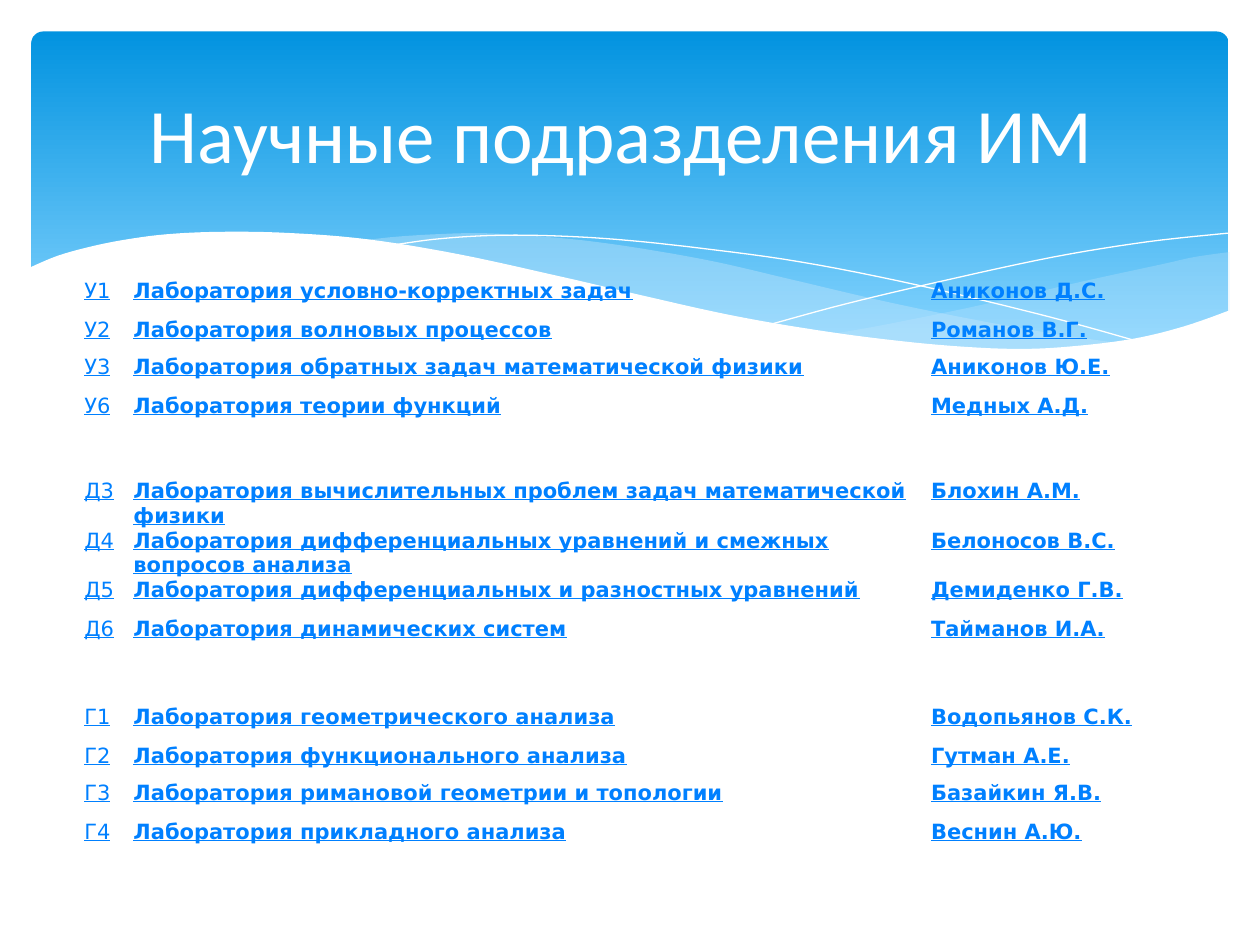
from dataclasses import dataclass

from lxml.etree import SubElement
from pptx import Presentation
from pptx.dml.color import RGBColor
from pptx.enum.shapes import MSO_SHAPE
from pptx.enum.text import MSO_ANCHOR, PP_ALIGN
from pptx.oxml.ns import qn
from pptx.util import Cm, Pt


@dataclass(frozen=True)
class Theme:
    """Colours, fonts and type sizes of the slide."""
    white: RGBColor = RGBColor.from_string("FFFFFF")
    deep: RGBColor = RGBColor.from_string("0293E0")
    light: RGBColor = RGBColor.from_string("83D3FE")
    mist: RGBColor = RGBColor.from_string("C6E7FC")
    link: RGBColor = RGBColor.from_string("0080FF")
    head: str = "Calibri"
    body: str = "DejaVu Sans"
    large: Pt = Pt(44)
    small: Pt = Pt(12)
    tiny: Pt = Pt(10)


THEME = Theme()
TITLE = "Научные подразделения ИМ "
PLAIN = "{2D5ABB26-0587-4C30-8999-92F81FD0307C}"
TALL, MID, GAP = Cm(0.79), Cm(0.74), Cm(0.49)
COLS = [Cm(0.99), Cm(16.08), Cm(4.52)]
GROUPS = [
    ([TALL, MID, TALL, MID], [
        ("У1", "Лаборатория условно-корректных задач", "Аниконов Д.С."),
        ("У2", "Лаборатория волновых процессов", "Романов В.Г."),
        ("У3", "Лаборатория обратных задач математической физики", "Аниконов Ю.Е."),
        ("У6", "Лаборатория теории функций", "Медных А.Д."),
    ]),
    ([TALL] * 4, [
        ("Д3", "Лаборатория вычислительных проблем задач математической физики",
         "Блохин А.М."),
        ("Д4", "Лаборатория дифференциальных уравнений и смежных вопросов анализа",
         "Белоносов В.С."),
        ("Д5", "Лаборатория дифференциальных и разностных уравнений", "Демиденко Г.В."),
        ("Д6", "Лаборатория динамических систем", "Тайманов И.А."),
    ]),
    ([TALL, MID, TALL, MID], [
        ("Г1", "Лаборатория геометрического анализа", "Водопьянов С.К."),
        ("Г2", "Лаборатория функционального анализа", "Гутман А.Е."),
        ("Г3", "Лаборатория римановой геометрии и топологии", "Базайкин Я.В."),
        ("Г4", "Лаборатория прикладного анализа", "Веснин А.Ю."),
    ]),
]

RIGHT = [
    [(97.6, 20), (94.8, 20.4), (92.1, 21), (86.1, 22.3), (77.9, 24.2), (70.6, 25.7),
     (66.1, 26.5)],
    [(66.1, 26.5), (70.5, 27.1), (74.5, 27.5), (78.1, 27.7), (81.4, 27.8),
     (85.4, 27.7), (88.9, 27.2), (92.1, 26.5), (94.9, 25.7), (97.6, 24.7)],
]
LEFT = [
    [(89.3, 27.3), (83.7, 26.5), (77.5, 25.4), (70.6, 24), (62.9, 22.2), (56.9, 20.8),
     (51.4, 19.8), (46.5, 19.1), (42, 18.7), (38, 18.5), (34.4, 18.6), (31.3, 18.8),
     (28.6, 19.1)],
    [(28.6, 19.1), (34.2, 19.9), (40.4, 21.1), (44.9, 22.2), (53, 24), (60.1, 25.5),
     (66.5, 26.6), (72.2, 27.4), (77.3, 27.7), (81.8, 27.8), (85.7, 27.7), (89.3, 27.3)],
]
FALL = [[(30.9, 19.5), (34.4, 19), (38.7, 18.7), (43.3, 18.7), (48.9, 19), (55.6, 19.7),
         (63.6, 20.8), (72.7, 22.6), (83.1, 25.1), (90.7, 27.2)]]
RISE = [[(61.3, 25.7), (67.2, 24.1), (74.8, 22.3), (83.6, 20.4), (91, 19.2), (97.5, 18.5)]]
BASE = [
    [(97.7, 24.6), (94, 25.9), (89.9, 26.9), (85, 27.5), (80.9, 27.7), (76.1, 27.5),
     (70.8, 27), (64.8, 26.2), (57.9, 25), (50.3, 23.3), (44.7, 22), (36.5, 20.2),
     (29.2, 19), (23, 18.5), (17.7, 18.4), (13.2, 18.6), (9.5, 19.1), (6.7, 19.7),
     (4.6, 20.3), (2.9, 21), (2.3, 21.3)],
    [(2.3, 21.3), (2.3, 32.9)],
    [(2.3, 32.9), (97.7, 32.9)],
]


def curve(knots, steps=6):
    """Return points of a smooth line through the knots."""
    ends = [knots[0], *knots, knots[-1]]
    dots = [knots[0]]
    for a, b, c, d in zip(ends, ends[1:], ends[2:], ends[3:]):
        for t in (n / steps for n in range(1, steps + 1)):
            dots.append(tuple(
                q + t * (r - p) / 2 + t * t * (2 * p - 5 * q + 4 * r - s) / 2
                + t ** 3 * (3 * q - p - 3 * r + s) / 2
                for p, q, r, s in zip(a, b, c, d)))
    return dots


def wave(slide, box, arcs, tint=None, alpha=100):
    """Draw joined arcs in hundredths of the box width, filled or as a hairline."""
    left, top, width, _ = box
    dots = [(left + x * width / 100, top + y * width / 100)
            for arc in arcs for x, y in curve(arc)]
    pen = slide.shapes.build_freeform(*dots[0], scale=1.0)
    pen.add_line_segments(dots[1:], close=tint is not None)
    form = pen.convert_to_shape()
    form.shadow.inherit = False
    if tint is None:
        form.fill.background()
        form.line.color.rgb = THEME.white
        form.line.width = Pt(0)
        return
    form.fill.solid()
    form.fill.fore_color.rgb = tint
    form.line.fill.background()
    if alpha < 100:
        hue = form.element.find(".//" + qn("a:srgbClr"))
        SubElement(hue, qn("a:alpha"), val=str(alpha * 1000))


def banner(slide, box):
    """Draw the blue band and the waves along its lower edge."""
    left, top, width, _ = box
    edge = int(width * 0.025)
    band = slide.shapes.add_shape(MSO_SHAPE.ROUNDED_RECTANGLE, left + edge, top + edge,
                                  width - 2 * edge, Cm(6.86))
    band.adjustments[0] = 0.034
    band.shadow.inherit = False
    band.line.fill.background()
    band.fill.gradient()
    band.fill.gradient_angle = 270
    for stop, spot, hue in zip(band.fill.gradient_stops, (0, 0.9), (THEME.deep, THEME.light)):
        stop.position = spot
        stop.color.rgb = hue
    wave(slide, box, RIGHT, THEME.mist, 29)
    wave(slide, box, LEFT, THEME.mist, 40)
    wave(slide, box, FALL)
    wave(slide, box, RISE)
    wave(slide, box, BASE, THEME.white)


def style(run, face, size, hue):
    """Set the font of a run."""
    run.font.name, run.font.size = face, size
    run.font.color.rgb = hue


def heading(slide, box):
    """Place the title in front of the band."""
    title = slide.shapes.title
    title.left, title.top, title.width, title.height = box
    frame = title.text_frame
    frame.text = TITLE
    frame.vertical_anchor = MSO_ANCHOR.MIDDLE
    frame.paragraphs[0].alignment = PP_ALIGN.CENTER
    style(frame.paragraphs[0].runs[0], THEME.head, THEME.large, THEME.white)
    slide.shapes.element.append(title.element)


def fill(cell, text, bold):
    """Write one table cell without margins or background."""
    cell.margin_left = cell.margin_right = cell.margin_top = cell.margin_bottom = 0
    cell.fill.background()
    para = cell.text_frame.paragraphs[0]
    if not text:
        SubElement(para._p, qn("a:endParaRPr"), sz=str(int(THEME.tiny.pt * 100)))
        return
    para.text = text
    run = para.runs[0]
    style(run, THEME.body, THEME.small, THEME.link)
    run.font.bold, run.font.underline = bold, True


def staff(slide, box):
    """Place the table of laboratories and their heads."""
    blank = (GAP, ("", "", ""))
    lines = [line for sizes, labs in GROUPS for line in (blank, *zip(sizes, labs), blank)]
    grid = slide.shapes.add_table(len(lines), len(COLS), *box).table
    grid.first_row = grid.horz_banding = False
    grid._tbl.tblPr.find(qn("a:tableStyleId")).text = PLAIN
    for col, width in zip(grid.columns, COLS):
        col.width = width
    for row, (height, texts) in zip(grid.rows, lines):
        row.height = height
        for n, (cell, text) in enumerate(zip(row.cells, texts)):
            fill(cell, text, n > 0)


def main():
    """Build and save the slide."""
    deck = Presentation()
    deck.slide_width, deck.slide_height = Cm(25.4), Cm(19.05)
    slide = deck.slides.add_slide(deck.slide_layouts[5])
    banner(slide, (0, 0, deck.slide_width, deck.slide_height))
    staff(slide, (Cm(1.7), Cm(5.13), sum(COLS), Cm(12.24)))
    heading(slide, (Cm(1.27), Cm(0.94), Cm(22.86), Cm(3.48)))
    deck.save("out.pptx")


if __name__ == "__main__":
    main()
